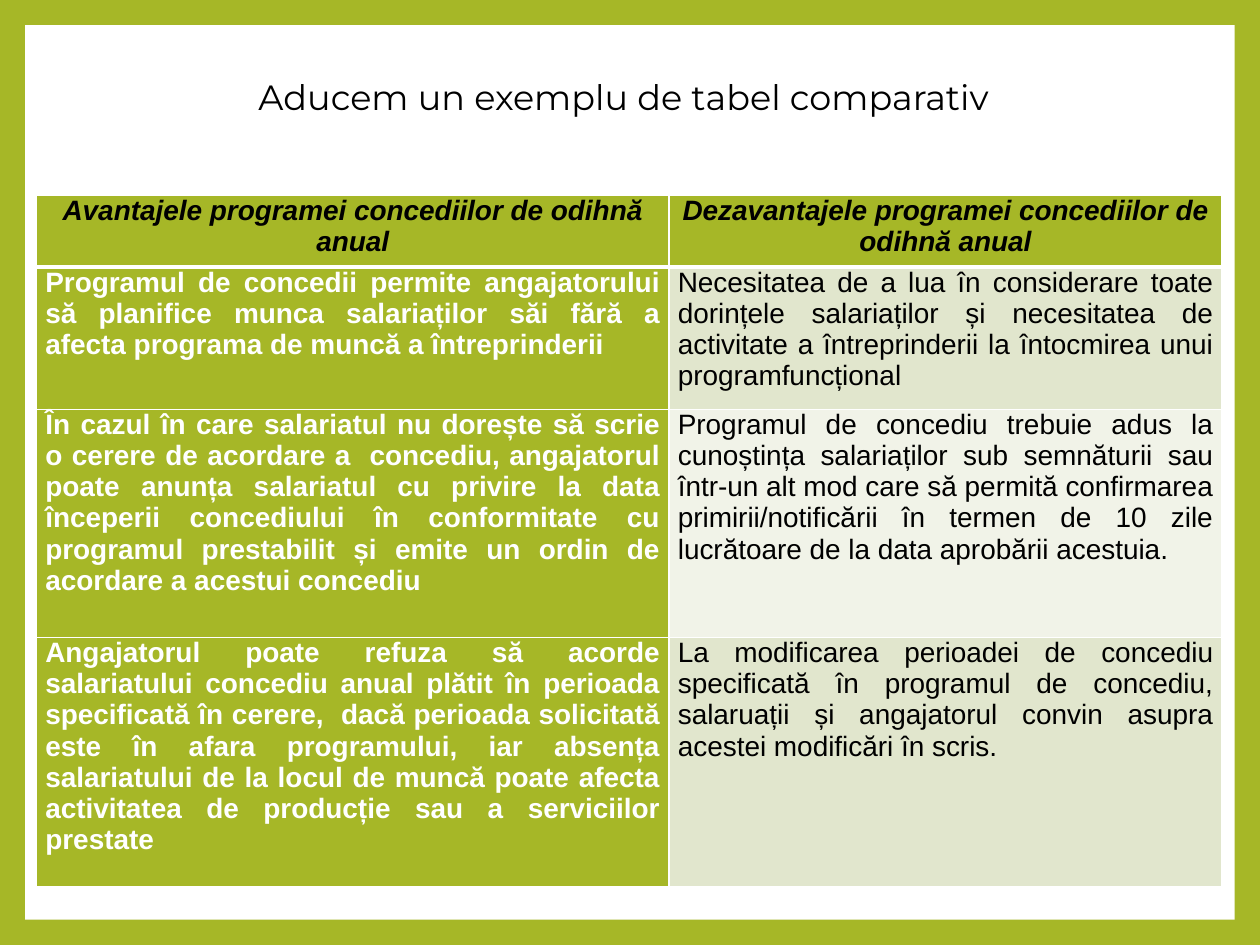
"""Build a slide with a two-column table comparing pros and cons of leave planning."""
import pptx
import pptx.dml.color
import pptx.enum.shapes
import pptx.enum.text
import pptx.oxml
import pptx.oxml.ns
import pptx.util

Inches = pptx.util.Inches
Pt = pptx.util.Pt
ALIGN = pptx.enum.text.PP_ALIGN
GREEN, WHITE, BLACK = "A6B727", "FFFFFF", "000000"
BANDS = ["E1E6CD", "F1F3E8"]


def rgb(value):
    return pptx.dml.color.RGBColor.from_string(value)


def write(tf, text, size=16, font="Arial", color=BLACK, bold=False, italic=False, align=ALIGN.JUSTIFY):
    p = tf.paragraphs[0]
    p.alignment = align
    r = p.add_run()
    r.text = text
    r.font.size = Pt(size)
    r.font.name = font
    r.font.bold = bold
    r.font.italic = italic
    r.font.color.rgb = rgb(color)
    return p


prs = pptx.Presentation()
prs.slide_width, prs.slide_height = Inches(10), Inches(7.5)
s = prs.slides.add_slide(prs.slide_layouts[1])
s.background.fill.solid()
s.background.fill.fore_color.rgb = rgb(GREEN)
title = s.shapes.title._element
title.getparent().remove(title)

panel = s.shapes.add_shape(pptx.enum.shapes.MSO_SHAPE.RECTANGLE,
                           Inches(0.2), Inches(0.2), Inches(9.6), Inches(7.1))
panel.shadow.inherit = False
panel.fill.solid()
panel.fill.fore_color.rgb = rgb(WHITE)
panel.line.fill.background()
s.shapes._spTree.insert(2, panel._element)

body = s.placeholders[1]
body.left, body.top, body.width, body.height = Inches(0.67), Inches(0.59), Inches(8.47), Inches(6.31)
tf = body.text_frame
tf.auto_size = pptx.enum.text.MSO_AUTO_SIZE.NONE
tf.vertical_anchor = pptx.enum.text.MSO_ANCHOR.TOP
p = write(tf, "Aducem un exemplu de tabel comparativ", size=20, font="Montserrat", align=ALIGN.CENTER)
p.line_spacing = 0.9
p.space_before = Pt(10)
pPr = p._p.get_or_add_pPr()
pPr.set("marL", str(Inches(0.09)))
pPr.set("indent", "0")
pPr.append(pptx.oxml.parse_xml(f'<a:buNone {pptx.oxml.ns.nsdecls("a")}/>'))

rows = [
    ("Avantajele programei concediilor de odihnă anual",
     "Dezavantajele programei concediilor de odihnă anual"),
    ("Programul de concedii permite angajatorului să planifice munca salariaților săi fără a "
     "afecta programa de muncă a întreprinderii",
     "Necesitatea de a lua în considerare toate dorințele salariaților și necesitatea de "
     "activitate a întreprinderii la întocmirea unui programfuncțional"),
    ("În cazul în care salariatul nu dorește să scrie o cerere de acordare a  concediu, "
     "angajatorul poate anunța salariatul cu privire la data începerii concediului în "
     "conformitate cu programul prestabilit și emite un ordin de acordare a acestui concediu",
     "Programul de concediu trebuie adus la cunoștința salariaților sub semnăturii sau într-un "
     "alt mod care să permită confirmarea primirii/notificării în termen de 10 zile lucrătoare "
     "de la data aprobării acestuia."),
    ("Angajatorul poate refuza să acorde salariatului concediu anual plătit în perioada "
     "specificată în cerere,  dacă perioada solicitată este în afara programului, iar absența "
     "salariatului de la locul de muncă poate afecta activitatea de producție sau a serviciilor "
     "prestate",
     "La modificarea perioadei de concediu specificată în programul de concediu, salaruații și "
     "angajatorul convin asupra acestei modificări în scris."),
]
widths = [5.02, 4.39]
heights = [0.57, 1.13, 1.81, 1.98]
tbl = s.shapes.add_table(len(rows), len(widths), Inches(0.29), Inches(1.55),
                         Inches(sum(widths)), Inches(sum(heights))).table
for column, width in zip(tbl.columns, widths):
    column.width = Inches(width)

for i, (texts, height) in enumerate(zip(rows, heights)):
    tbl.rows[i].height = Inches(height)
    for j, text in enumerate(texts):
        header, label = i == 0, j == 0
        cell = tbl.cell(i, j)
        cell.margin_left = cell.margin_right = Inches(0.07)
        cell.margin_top = cell.margin_bottom = 0
        cell.fill.solid()
        cell.fill.fore_color.rgb = rgb(GREEN if header or label else BANDS[(i - 1) % 2])
        write(cell.text_frame, text, color=WHITE if label and not header else BLACK,
              bold=header or label, italic=header, align=ALIGN.CENTER if header else ALIGN.JUSTIFY)
        tcPr = cell._tc.get_or_add_tcPr()
        for k, side in enumerate("LRTB"):
            thick = (i, side) in [(0, "B"), (1, "T")]
            tcPr.insert(k, pptx.oxml.parse_xml(
                f'<a:ln{side} {pptx.oxml.ns.nsdecls("a")} w="{Pt(3 if thick else 1)}">'
                f'<a:solidFill><a:srgbClr val="{WHITE}"/></a:solidFill></a:ln{side}>'))

prs.save("out.pptx")
